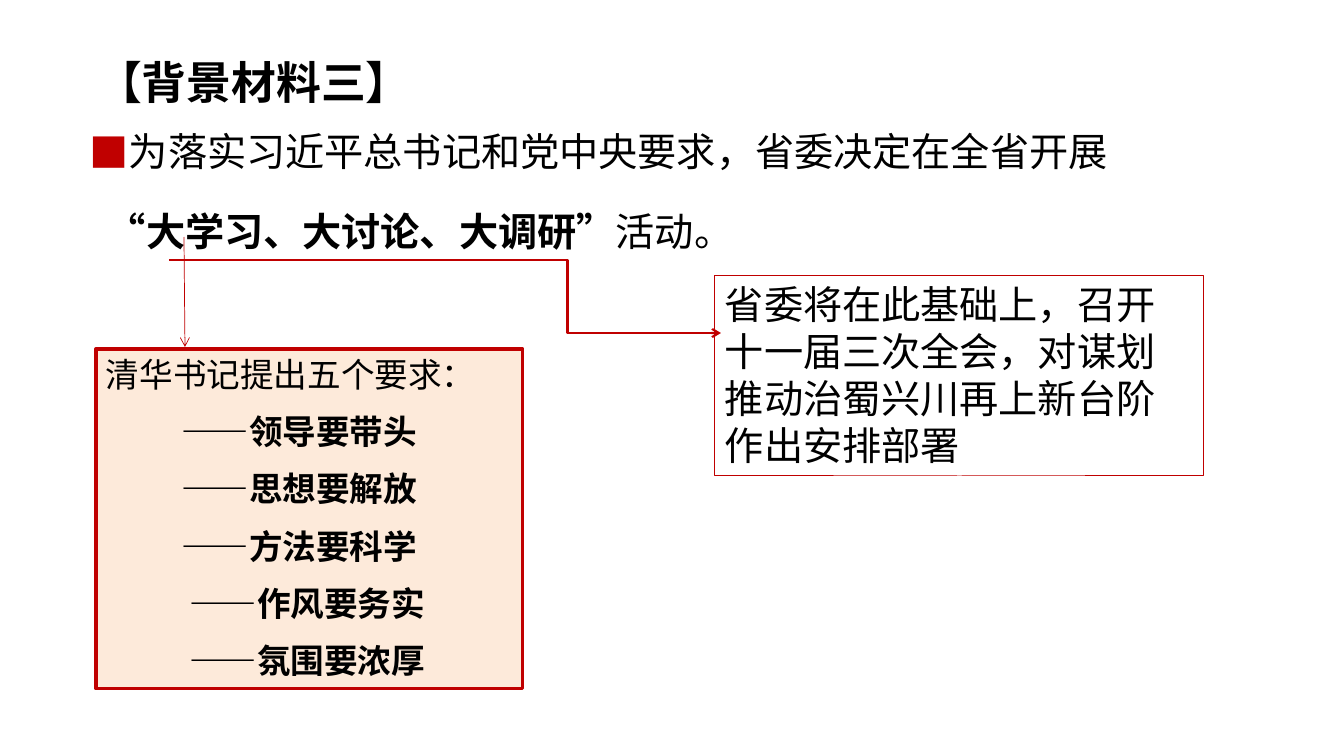
"""Build a slide on a provincial study campaign with its two follow-up boxes."""
import dataclasses

import pptx
import pptx.dml.color
import pptx.enum.shapes
import pptx.enum.text
import pptx.oxml
import pptx.oxml.ns
import pptx.util

TITLE = "【背景材料三】"
INTRO = "为落实习近平总书记和党中央要求，省委决定在全省开展"
CAMPAIGN = [("“大学习、大讨论、大调研”", True), ("活动。", False)]
PLAN = ["省委将在此基础上，召开", "十一届三次全会，对谋划", "推动治蜀兴川再上新台阶", "作出安排部署"]
DEMANDS_HEAD = "清华书记提出五个要求："
DEMANDS = [
    ("——领导要带头", 76),
    ("——思想要解放", 76),
    ("——方法要科学", 76),
    ("——作风要务实", 84),
    ("——氛围要浓厚", 84),
]

TITLE_AREA = (87, 50, 337, 65)
INTRO_AREA = (80, 122, 1083, 139)
PLAN_AREA = (715, 275, 489, 201)
DEMANDS_AREA = (96, 349, 427, 340)
PLAN_ARROW = (169, 260, 721, 333)
DEMANDS_ARROW = (184, 237, 185, 347)
PLAN_BEND = 72200


@dataclasses.dataclass(frozen=True)
class Theme:
    """Colours, font and type sizes."""
    font: str = "Noto Sans CJK SC"
    ink: str = "000000"
    red: str = "C00000"
    peach: str = "FDEADA"
    title: int = 32
    body: int = 28
    small: int = 24


THEME = Theme()


def px(length):
    """Turn px into EMU."""
    return round(length * 914400 / 100.8)


def color(code):
    """Return an RGB colour."""
    return pptx.dml.color.RGBColor.from_string(code)


def add_xml(parent, markup):
    """Append one drawing element to a parent."""
    namespace = pptx.oxml.ns.nsdecls("a")
    tag, rest = markup.split(" ", 1)
    parent.append(pptx.oxml.parse_xml(f"{tag} {namespace} {rest}"))


def write(para, pieces, size, before=0, after=0, left=0, hanging=0, bullet=None):
    """Fill a paragraph with (text, bold) runs."""
    para.space_before = pptx.util.Pt(before)
    para.space_after = pptx.util.Pt(after)
    properties = para._p.get_or_add_pPr()
    properties.set("marL", str(px(left)))
    properties.set("indent", str(px(-hanging)))
    if bullet:
        add_xml(properties, f'<a:buClr ><a:srgbClr val="{THEME.red}"/></a:buClr>')
        add_xml(properties, f'<a:buFont typeface="{THEME.font}"/>')
        add_xml(properties, f'<a:buChar char="{bullet}"/>')
    for text, bold in pieces:
        span = para.add_run()
        span.text = text
        span.font.name = THEME.font
        span.font.size = pptx.util.Pt(size)
        span.font.bold = bold
        span.font.color.rgb = color(THEME.ink)
        add_xml(span._r.get_or_add_rPr(), f'<a:ea typeface="{THEME.font}"/>')


def add_paragraphs(box, count, align=pptx.enum.text.PP_ALIGN.LEFT, wrap=True):
    """Return count aligned paragraphs in a top-anchored box."""
    frame = box.text_frame
    frame.word_wrap = wrap
    frame.auto_size = pptx.enum.text.MSO_AUTO_SIZE.NONE
    frame.vertical_anchor = pptx.enum.text.MSO_ANCHOR.TOP
    for _ in range(count - 1):
        frame.add_paragraph()
    for para in frame.paragraphs:
        para.alignment = align
    return frame.paragraphs


def add_panel(page, area, width, fill=None):
    """Add a red-edged rectangle."""
    panel = page.shapes.add_shape(pptx.enum.shapes.MSO_SHAPE.RECTANGLE, *map(px, area))
    panel.shadow.inherit = False
    if fill:
        panel.fill.solid()
        panel.fill.fore_color.rgb = color(fill)
    else:
        panel.fill.background()
    panel.line.color.rgb = color(THEME.red)
    panel.line.width = pptx.util.Pt(width)
    return panel


def add_arrow(page, kind, ends, width):
    """Add a red connector with an open arrowhead."""
    arrow = page.shapes.add_connector(kind, *map(px, ends))
    arrow.line.color.rgb = color(THEME.red)
    arrow.line.width = pptx.util.Pt(width)
    add_xml(arrow.line._get_or_add_ln(), '<a:tailEnd type="arrow"/>')
    add_xml(arrow._element.spPr, "<a:effectLst />")
    return arrow


def main():
    """Compose and save the slide."""
    deck = pptx.Presentation()
    deck.slide_width, deck.slide_height = px(1344), px(756)
    page = deck.slides.add_slide(deck.slide_layouts[5])

    title = page.shapes.title
    title.left, title.top, title.width, title.height = map(px, TITLE_AREA)
    write(add_paragraphs(title, 1, wrap=False)[0], [(TITLE, True)], THEME.title)

    intro = page.shapes.add_textbox(*map(px, INTRO_AREA))
    first, second = add_paragraphs(intro, 2, pptx.enum.text.PP_ALIGN.JUSTIFY)
    write(first, [(INTRO, False)], THEME.body, left=38, hanging=38, bullet="■")
    write(second, CAMPAIGN, THEME.body, before=24, left=17)

    plan = add_panel(page, PLAN_AREA, 0.75)
    for para, line in zip(add_paragraphs(plan, len(PLAN)), PLAN):
        write(para, [(line, False)], THEME.body)

    connectors = pptx.enum.shapes.MSO_CONNECTOR
    bent = add_arrow(page, connectors.ELBOW, PLAN_ARROW, 1.5)
    guides = bent._element.spPr.find(pptx.oxml.ns.qn("a:prstGeom")).get_or_add_avLst()
    add_xml(guides, f'<a:gd name="adj1" fmla="val {PLAN_BEND}"/>')
    add_arrow(page, connectors.STRAIGHT, DEMANDS_ARROW, 0.5)

    demands = add_panel(page, DEMANDS_AREA, 2.25, THEME.peach)
    head, *items = add_paragraphs(demands, len(DEMANDS) + 1)
    write(head, [(DEMANDS_HEAD, False)], THEME.small, after=6)
    for para, (text, left) in zip(items, DEMANDS):
        write(para, [(text, True)], THEME.small, before=6, after=6, left=left)

    deck.save("out.pptx")


if __name__ == "__main__":
    main()
